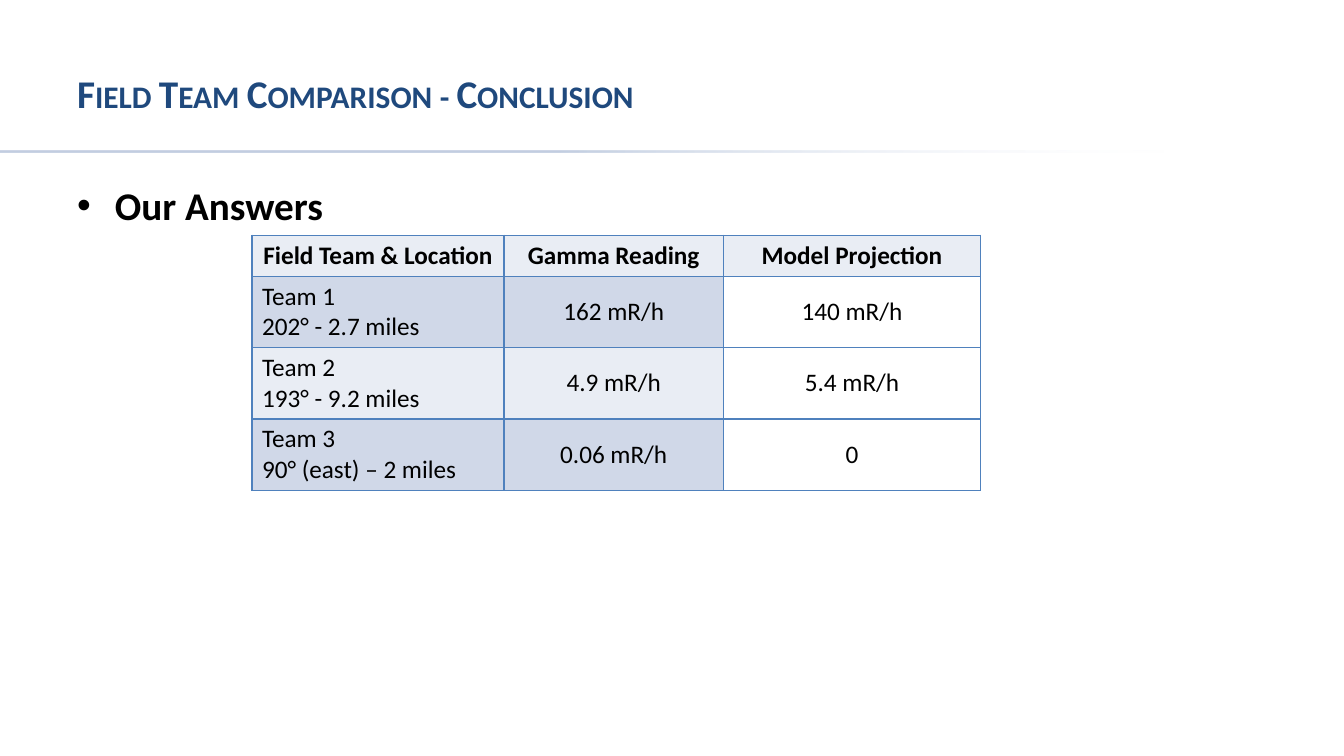
from dataclasses import dataclass

from lxml import etree
from pptx import Presentation
from pptx.dml.color import RGBColor
from pptx.enum.shapes import MSO_SHAPE
from pptx.enum.text import MSO_ANCHOR, PP_ALIGN
from pptx.oxml.ns import qn
from pptx.util import Emu, Pt

RECT = MSO_SHAPE.RECTANGLE
TOP, MID = MSO_ANCHOR.TOP, MSO_ANCHOR.MIDDLE
LEFT, CENTER = PP_ALIGN.LEFT, PP_ALIGN.CENTER
SCALE = 9525


@dataclass(frozen=True)
class Theme:
    font: str = "Calibri"
    head: int = 28
    cell: int = 18
    navy: str = "1F497D"
    black: str = "000000"
    edge: str = "4F81BD"
    pale: str = "E9EDF4"
    band: str = "D0D8E8"
    white: str = "FFFFFF"
    fade: tuple = (("3C619E", 48, 31), ("E1E8F5", 100, 0))


THEME = Theme()
TEAMS = [
    ("Field Team & Location", "Gamma Reading", "Model Projection"),
    ("Team 1\n202° - 2.7 miles", "162 mR/h", "140 mR/h"),
    ("Team 2\n193° - 9.2 miles", "4.9 mR/h", "5.4 mR/h"),
    ("Team 3\n90° (east) – 2 miles", "0.06 mR/h", "0"),
]
COLS = (240, 209, 245)
ROWS = (39, 68, 68, 68)


def px(n):
    return Emu(n * SCALE)


def rgb(code):
    return RGBColor.from_string(code)


def sub(node, tag, **attrs):
    return etree.SubElement(node, qn(tag), attrs)


def add_run(para, text, size, color, bold):
    run = para.add_run()
    run.text = text
    font = run.font
    font.name, font.size, font.bold = THEME.font, Pt(size), bold
    font.color.rgb = rgb(color)
    return run


def add_box(slide, box, anchor):
    frame = slide.shapes.add_textbox(*map(px, box)).text_frame
    frame.word_wrap = True
    frame.vertical_anchor = anchor
    return frame.paragraphs[0]


def add_rule(slide, box):
    rule = slide.shapes.add_shape(RECT, *map(px, box))
    rule.shadow.inherit = False
    rule.line.fill.background()
    rule.fill.gradient()
    rule.fill.gradient_angle = 0
    for stop, (color, place, alpha) in zip(rule.fill.gradient_stops, THEME.fade):
        stop.position = place / 100
        stop.color.rgb = rgb(color)
    tints = rule.element.spPr.iter(qn("a:srgbClr"))
    for tint, (color, place, alpha) in zip(tints, THEME.fade):
        sub(tint, "a:alpha", val=str(alpha * 1000))


def add_title(slide, box, text):
    para = add_box(slide, box, MID)
    run = add_run(para, text, THEME.head, THEME.navy, True)
    run.font._element.set("cap", "small")


def add_body(slide, box, text):
    para = add_box(slide, box, TOP)
    props = para._p.get_or_add_pPr()
    props.set("marL", str(px(36)))
    props.set("indent", str(px(-36)))
    sub(sub(props, "a:spcBef"), "a:spcPct", val="20000")
    sub(props, "a:buFont", typeface="Arial")
    sub(props, "a:buChar", char="•")
    add_run(para, text, THEME.head, THEME.black, True)


def add_edges(cell):
    props = cell._tc.get_or_add_tcPr()
    for spot, side in enumerate(("a:lnL", "a:lnR", "a:lnT", "a:lnB")):
        line = etree.Element(qn(side), w=str(Pt(1)))
        sub(sub(line, "a:solidFill"), "a:srgbClr", val=THEME.edge)
        props.insert(spot, line)


def add_cell(cell, text, row, col):
    head = row == 0
    shade = THEME.band if row % 2 else THEME.pale
    cell.fill.solid()
    cell.fill.fore_color.rgb = rgb(THEME.white if row and col == 2 else shade)
    cell.vertical_anchor = MID if row and col else TOP
    frame = cell.text_frame
    for i, line in enumerate(text.split("\n")):
        para = frame.add_paragraph() if i else frame.paragraphs[0]
        para.alignment = CENTER if head or col else LEFT
        add_run(para, line, THEME.cell, THEME.black, head)
    add_edges(cell)


def add_grid(slide, left, top):
    box = (left, top, sum(COLS), sum(ROWS))
    table = slide.shapes.add_table(len(ROWS), len(COLS), *map(px, box)).table
    for col, width in zip(table.columns, COLS):
        col.width = px(width)
    for row, high in zip(table.rows, ROWS):
        row.height = px(high)
    for r, texts in enumerate(TEAMS):
        for c, text in enumerate(texts):
            add_cell(table.cell(r, c), text, r, c)


def main():
    deck = Presentation()
    deck.slide_width, deck.slide_height = px(1280), px(720)
    slide = deck.slides.add_slide(deck.slide_layouts[6])
    add_rule(slide, (-2, 143, 1114, 2))
    add_title(slide, (64, 28, 1152, 120), "Field Team Comparison - Conclusion")
    add_body(slide, (64, 168, 1152, 536), "Our Answers")
    add_grid(slide, 240, 224)
    deck.save("out.pptx")


if __name__ == "__main__":
    main()
